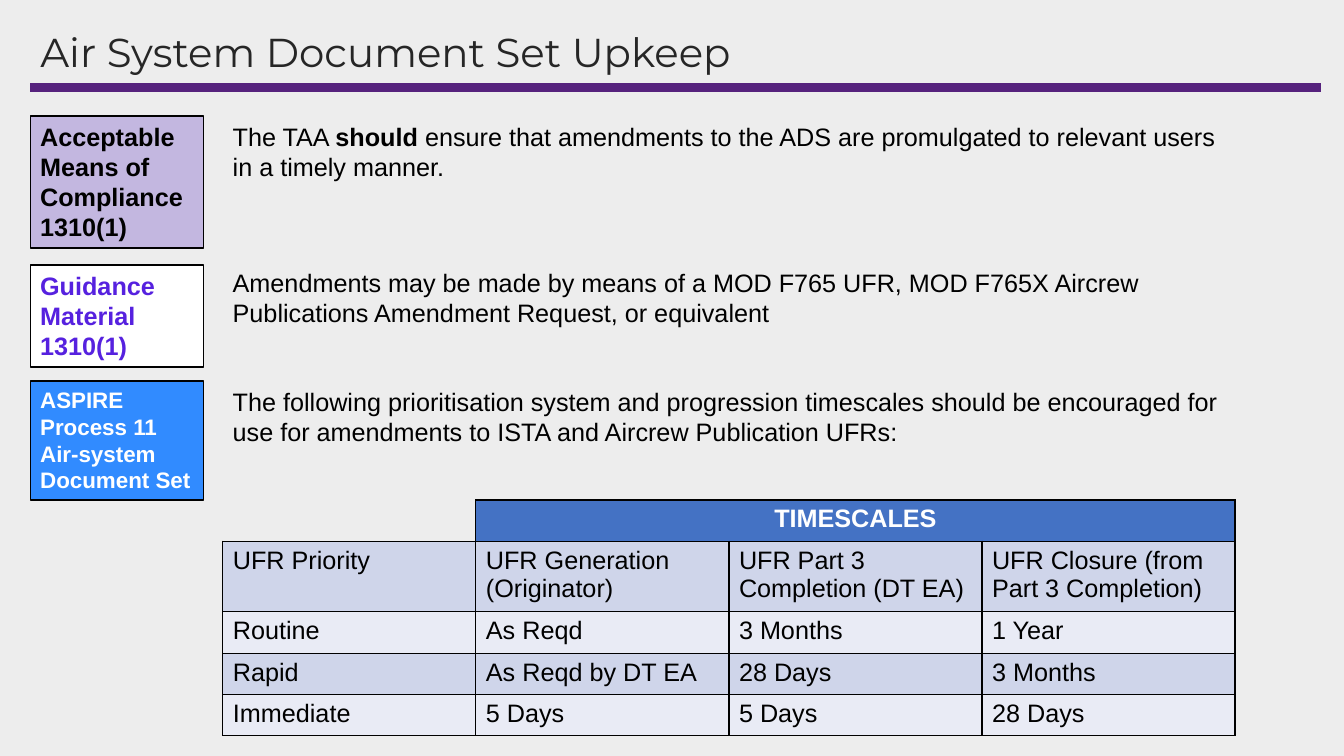
"""Build the Air System Document Set Upkeep slide."""
from lxml import etree
from pptx import Presentation
from pptx import util as u
from pptx.dml.color import RGBColor
from pptx.enum import shapes, text
from pptx.oxml.ns import qn

PX = 9144
BLACK = RGBColor(0x00, 0x00, 0x00)
WHITE = RGBColor(0xFF, 0xFF, 0xFF)
INK = RGBColor(0x26, 0x26, 0x26)
PAPER = RGBColor(0xED, 0xED, 0xED)
PURPLE = RGBColor(0x56, 0x22, 0x7D)
LILAC = RGBColor(0xC3, 0xB7, 0xE0)
VIOLET = RGBColor(0x56, 0x21, 0xDF)
SKY = RGBColor(0x31, 0x8B, 0xFF)
HEADER = RGBColor(0x44, 0x72, 0xC4)
BAND_DARK = RGBColor(0xCF, 0xD5, 0xEA)
BAND_LIGHT = RGBColor(0xE9, 0xEB, 0xF5)


def style(tf, size, color, bold=False, name="Arial"):
    """Format every run in a text frame."""
    for p in tf.paragraphs:
        for r in p.runs:
            r.font.name, r.font.size, r.font.bold = name, u.Pt(size), bold
            r.font.color.rgb = color


def border(cell, sides):
    """Draw black lines on the given sides of a cell and none on the others."""
    tcPr = cell._tc.get_or_add_tcPr()
    for side in "LRTB":
        ln = etree.SubElement(tcPr, qn("a:ln" + side), w=str(u.Pt(1)))
        if side in sides:
            fill = etree.SubElement(ln, qn("a:solidFill"))
            etree.SubElement(fill, qn("a:srgbClr"), val=str(BLACK))
        else:
            etree.SubElement(ln, qn("a:noFill"))


prs = Presentation()
prs.slide_width, prs.slide_height = 1333 * PX, 750 * PX
s = prs.slides.add_slide(prs.slide_layouts[5])
s.background.fill.solid()
s.background.fill.fore_color.rgb = PAPER

rule = s.shapes.add_connector(shapes.MSO_CONNECTOR.STRAIGHT, 30 * PX, 87 * PX, 1310 * PX, 87 * PX)
rule.line.color.rgb = PURPLE
rule.line.width = u.Pt(6)
etree.SubElement(rule._element.spPr, qn("a:effectLst"))

title = s.shapes.title
title.left, title.top, title.width, title.height = 30 * PX, 28 * PX, 1280 * PX, 53 * PX
tf = title.text_frame
tf.text = "Air System Document Set Upkeep"
tf.vertical_anchor = text.MSO_ANCHOR.MIDDLE
tf.auto_size = text.MSO_AUTO_SIZE.NONE
tf.paragraphs[0].alignment = text.PP_ALIGN.LEFT
tf.paragraphs[0].line_spacing = 0.9
style(tf, 28.8, INK, name="Montserrat")

sections = [
    (115, 131, LILAC, BLACK, 18, "Acceptable Means of Compliance 1310(1)", 115,
     ["The TAA ", "should", " ensure that amendments to the ADS are promulgated "
      "to relevant users in a timely manner."]),
    (263, 101, WHITE, VIOLET, 18, "Guidance Material 1310(1)", 260,
     ["Amendments may be made by means of a MOD F765 UFR, MOD F765X Aircrew "
      "Publications Amendment Request, or equivalent"]),
    (378, 118, SKY, WHITE, 16, "ASPIRE\nProcess 11\nAir-system Document Set", 378,
     ["The following prioritisation system and progression timescales should be "
      "encouraged for use for amendments to ISTA and Aircrew Publication UFRs:"]),
]
for top, height, fill, color, size, label, body_top, body in sections:
    sp = s.shapes.add_shape(shapes.MSO_SHAPE.RECTANGLE, 30 * PX, top * PX, 172 * PX, height * PX)
    sp.shadow.inherit = False
    sp.fill.solid()
    sp.fill.fore_color.rgb = fill
    sp.line.color.rgb = BLACK
    sp.line.width = u.Pt(1)
    tf = sp.text_frame
    tf.text = label
    tf.word_wrap = True
    tf.auto_size = text.MSO_AUTO_SIZE.SHAPE_TO_FIT_TEXT
    tf.vertical_anchor = text.MSO_ANCHOR.TOP
    for p in tf.paragraphs:
        p.alignment = text.PP_ALIGN.LEFT
    style(tf, size, color, bold=True)

    tf = s.shapes.add_textbox(221 * PX, body_top * PX, 1020 * PX, 71 * PX).text_frame
    tf.word_wrap = True
    tf.auto_size = text.MSO_AUTO_SIZE.SHAPE_TO_FIT_TEXT
    for part in body:
        tf.paragraphs[0].add_run().text = part
    style(tf, 18, BLACK)
    for r in tf.paragraphs[0].runs:
        r.font.bold = r.text == "should"

rows = [
    ["", "TIMESCALES", "", ""],
    ["UFR Priority", "UFR Generation (Originator)", "UFR Part 3 Completion (DT EA)",
     "UFR Closure (from Part 3 Completion)"],
    ["Routine", "As Reqd", "3 Months", "1 Year"],
    ["Rapid", "As Reqd by DT EA", "28 Days", "3 Months"],
    ["Immediate", "5 Days", "5 Days", "28 Days"],
]
table = s.shapes.add_table(5, 4, 221 * PX, 496 * PX, 1004 * PX, 234 * PX).table
for col in table.columns:
    col.width = 251 * PX
for i, row in enumerate(rows):
    table.rows[i].height = (70 if i == 1 else 41) * PX
    for j, value in enumerate(row):
        cell = table.cell(i, j)
        cell.text = value
        corner = i == j == 0
        border(cell, "RB" if corner else "LRTB")
        if corner:
            cell.fill.background()
        else:
            cell.fill.solid()
            cell.fill.fore_color.rgb = HEADER if i == 0 else BAND_DARK if i % 2 else BAND_LIGHT
        style(cell.text_frame, 18, BLACK if i else WHITE, bold=i == 0)
table.cell(0, 1).merge(table.cell(0, 3))
table.cell(0, 1).text_frame.paragraphs[0].alignment = text.PP_ALIGN.CENTER

prs.save("out.pptx")
